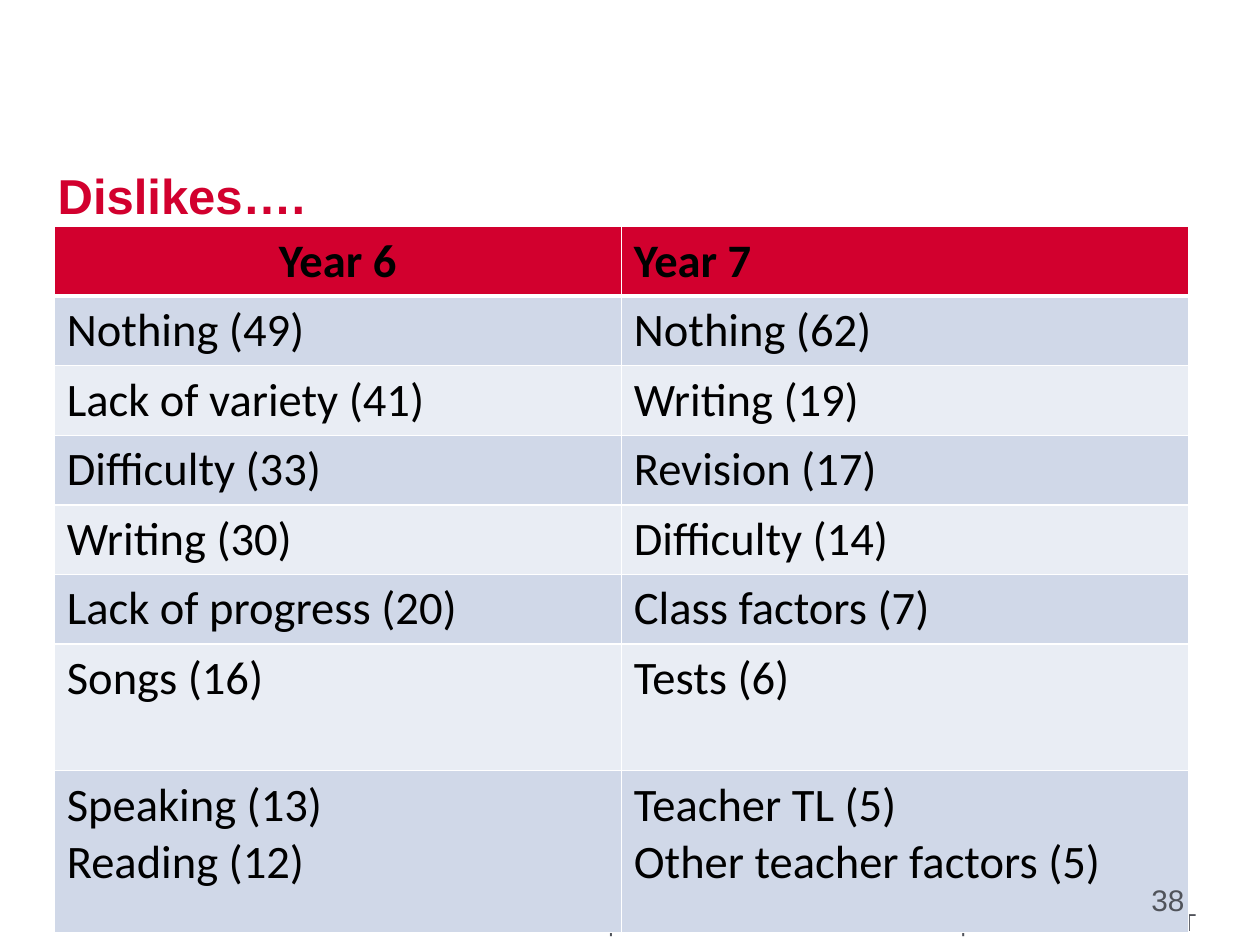
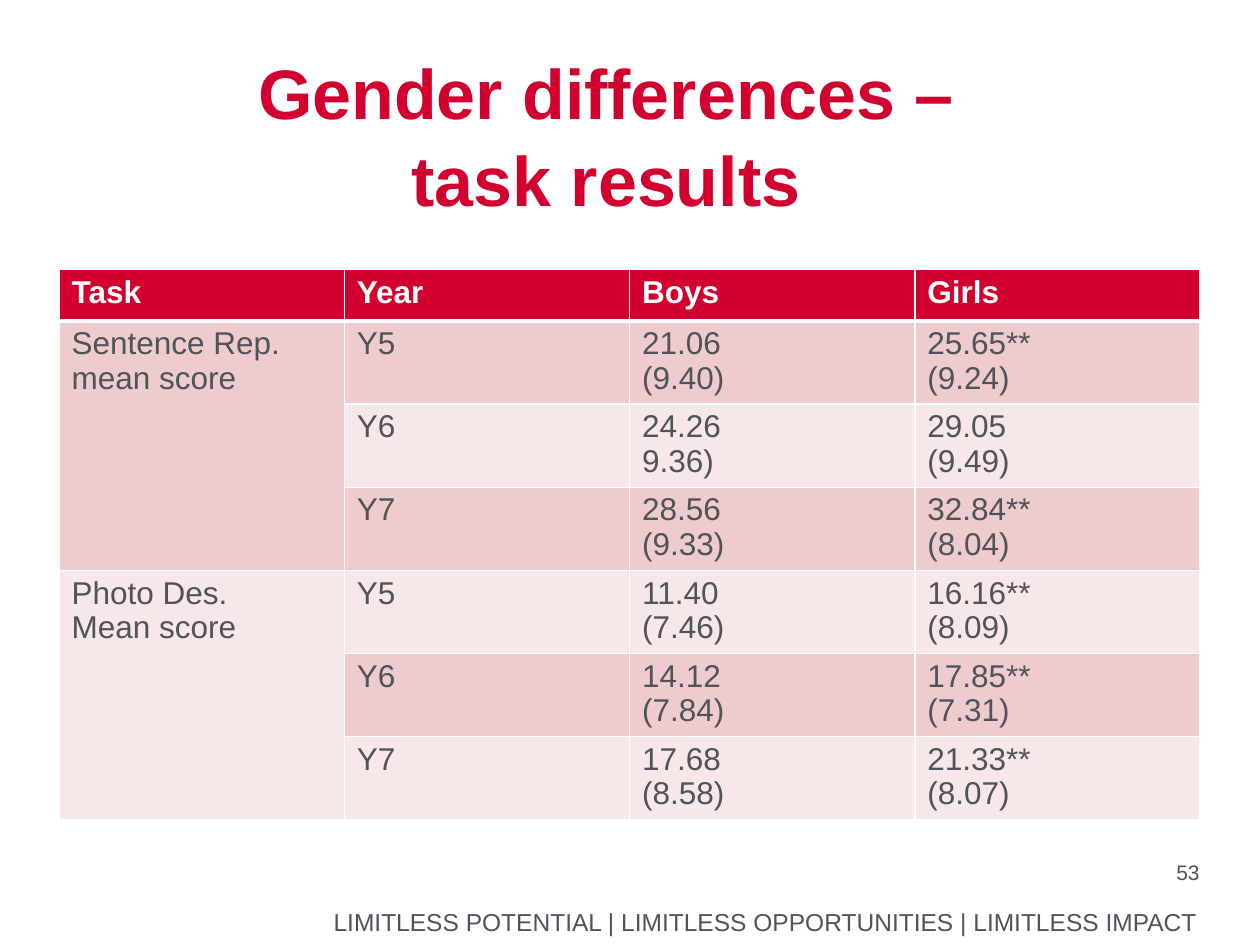
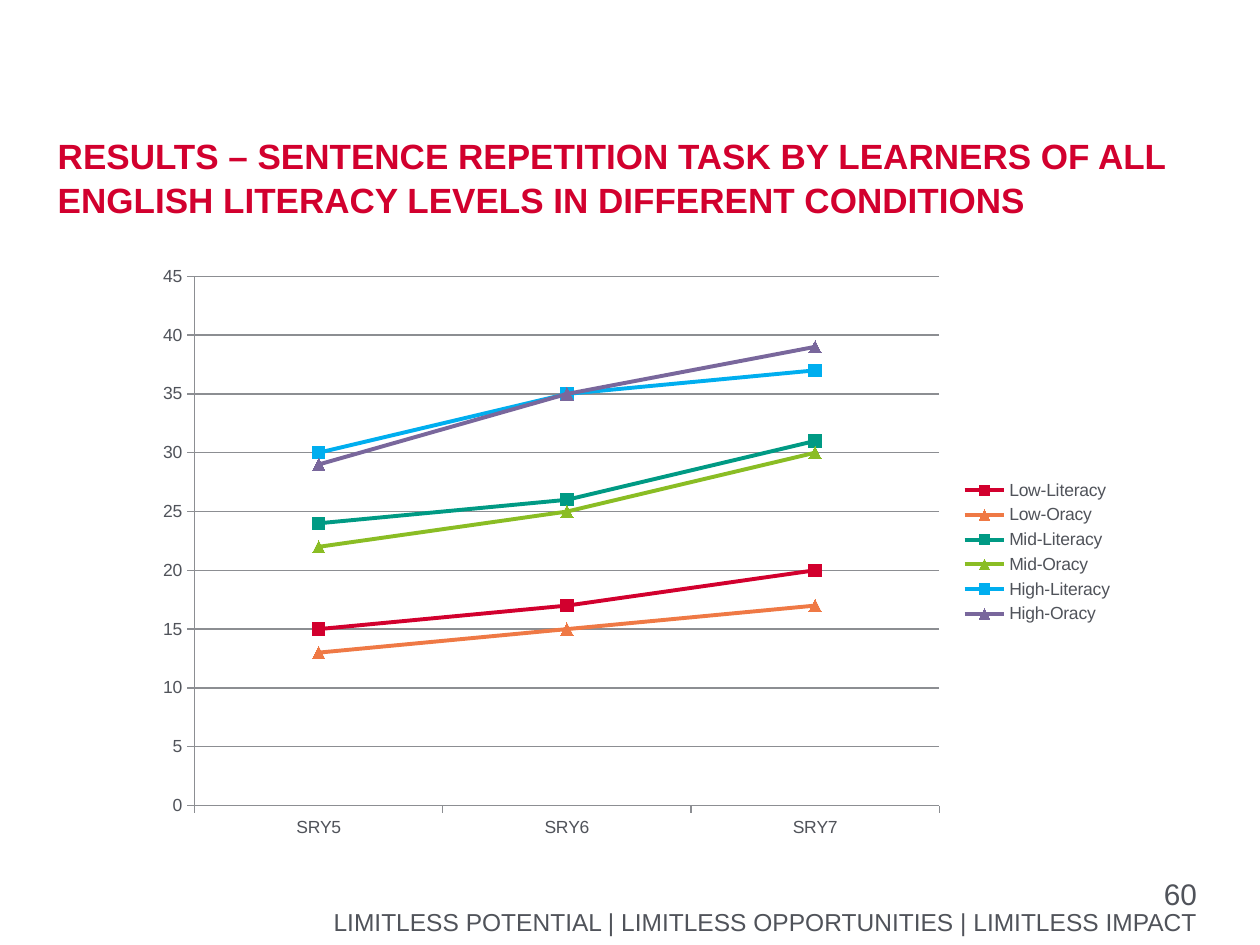
from collections import namedtuple

import lxml.etree
import pptx
import pptx.chart.data
import pptx.dml.color
import pptx.enum.chart
import pptx.enum.text
import pptx.oxml.ns
import pptx.util

Pt = pptx.util.Pt
ALIGN = pptx.enum.text.PP_ALIGN
ANCHOR = pptx.enum.text.MSO_ANCHOR
MARKER = pptx.enum.chart.XL_MARKER_STYLE

Box = namedtuple("Box", "left top width height")
TableStyle = namedtuple("TableStyle", "font size header dark light text spacing")

COLORS = {
    "red": "D2002E", "grey": "50535A", "white": "FFFFFF", "black": "000000",
    "blue_dark": "D0D8E8", "blue_light": "E9EDF4",
    "pink_dark": "EECCCD", "pink_light": "F7E7E8",
    "orange": "EF7945", "teal": "009A84", "green": "8ABD24",
    "sky": "00AEEF", "purple": "79679C", "axis": "8C8E92",
}
FONT = "Arial"
FOOTER = "LIMITLESS POTENTIAL | LIMITLESS OPPORTUNITIES | LIMITLESS IMPACT"
FOOTER_BOX = Box(152, 517.5, 532.5, 17.5)
TITLE_BOX = Box(33, 60.5, 652.5, 65.5)
NUMBER_BOX = Box(516, 500.5, 168, 29)

BLUE_STYLE = TableStyle("Calibri", 26.6, "black", "blue_dark", "blue_light", "black", 1.0)
PINK_STYLE = TableStyle(FONT, 18, "white", "pink_dark", "pink_light", "grey", 0.97)

DISLIKES = [
    ("Year 6", "Year 7"),
    ("Nothing (49)", "Nothing (62)"),
    ("Lack of variety (41)", "Writing (19)"),
    ("Difficulty (33)", "Revision (17)"),
    ("Writing (30)", "Difficulty (14)"),
    ("Lack of progress (20)", "Class factors (7)"),
    ("Songs (16)", "Tests (6)"),
    ("Speaking (13)\nReading (12)", "Teacher TL (5)\nOther teacher factors (5)"),
]
TASK_RESULTS = [
    ("Task", "Year", "Boys", "Girls"),
    ("Sentence Rep. mean score", "Y5", "21.06\n(9.40)", "25.65**\n(9.24)"),
    ("", "Y6", "24.26\n9.36)", "29.05\n(9.49)"),
    ("", "Y7", "28.56\n(9.33)", "32.84**\n(8.04)"),
    ("Photo Des.\nMean score", "Y5", "11.40\n(7.46)", "16.16**\n(8.09)"),
    ("", "Y6", "14.12\n(7.84)", "17.85**\n(7.31)"),
    ("", "Y7", "17.68\n(8.58)", "21.33**\n(8.07)"),
]
YEARS = ("SRY5", "SRY6", "SRY7")
SCORES = [
    ("Low-Literacy", "red", (15, 17, 20)),
    ("Low-Oracy", "orange", (13, 15, 17)),
    ("Mid-Literacy", "teal", (24, 26, 31)),
    ("Mid-Oracy", "green", (22, 25, 30)),
    ("High-Literacy", "sky", (30, 35, 37)),
    ("High-Oracy", "purple", (29, 35, 39)),
]


def rgb(name):
    """Return the named colour."""
    return pptx.dml.color.RGBColor.from_string(COLORS[name])


def points(box):
    """Return the box as four lengths."""
    return [Pt(value) for value in box]


def set_font(font, size, color, bold=False, name=FONT):
    """Set face, size, colour and weight of a font."""
    font.name, font.size, font.bold = name, Pt(size), bold
    font.color.rgb = rgb(color)


def set_frame(frame, anchor, margin=0):
    """Set wrapping, anchor and side margins of a text frame."""
    frame.word_wrap = True
    frame.auto_size = pptx.enum.text.MSO_AUTO_SIZE.NONE
    frame.vertical_anchor = anchor
    frame.margin_left = frame.margin_right = Pt(margin)
    frame.margin_top = frame.margin_bottom = Pt(margin / 2)


def add_right_text(slide, box, text, size, anchor, margin=0):
    """Add a right-aligned line of grey text."""
    frame = slide.shapes.add_textbox(*points(box)).text_frame
    set_frame(frame, anchor, margin)
    frame.text = text
    paragraph = frame.paragraphs[0]
    paragraph.alignment = ALIGN.RIGHT
    set_font(paragraph.font, size, "grey")


def add_number(slide, text, box=NUMBER_BOX, size=17, margin=0):
    """Add the slide number."""
    add_right_text(slide, box, text, size, ANCHOR.TOP, margin)


def add_slide(presentation, title, size, box=TITLE_BOX, alignment=ALIGN.LEFT):
    """Add a slide with the shared title style and footer."""
    slide = presentation.slides.add_slide(presentation.slide_layouts[5])
    shape = slide.shapes.title
    shape.left, shape.top, shape.width, shape.height = points(box)
    set_frame(shape.text_frame, ANCHOR.BOTTOM)
    shape.text_frame.text = title
    paragraph = shape.text_frame.paragraphs[0]
    paragraph.alignment = alignment
    paragraph.line_spacing = 1.04
    set_font(paragraph.font, size, "red", True)
    add_right_text(slide, FOOTER_BOX, FOOTER, 14, ANCHOR.BOTTOM)
    return slide


def set_borders(cell, row_index):
    """Draw white cell borders, thicker below the header row."""
    widths = {"lnL": 1, "lnR": 1, "lnT": 3 if row_index == 1 else 1,
              "lnB": 3 if row_index == 0 else 1}
    qn = pptx.oxml.ns.qn
    properties = cell._tc.get_or_add_tcPr()
    for tag, width in widths.items():
        line = lxml.etree.SubElement(properties, qn("a:" + tag), w=str(Pt(width)))
        fill = lxml.etree.SubElement(line, qn("a:solidFill"))
        lxml.etree.SubElement(fill, qn("a:srgbClr"), val=COLORS["white"])


def format_cell(cell, row_index, text, style):
    """Fill one table cell and style its text."""
    is_header = row_index == 0
    set_borders(cell, row_index)
    cell.fill.solid()
    band = style.dark if row_index % 2 else style.light
    cell.fill.fore_color.rgb = rgb("red" if is_header else band)
    cell.text_frame.text = text
    for paragraph in cell.text_frame.paragraphs:
        paragraph.line_spacing = style.spacing
        set_font(paragraph.font, style.size, style.header if is_header else style.text,
                 is_header, style.font)


def add_banded_table(slide, box, rows, heights, style):
    """Add a table with a red header and banded rows."""
    columns = len(rows[0])
    table = slide.shapes.add_table(len(rows), columns, *points(box)).table
    for column in table.columns:
        column.width = Pt(box.width / columns)
    for row_index, (texts, height) in enumerate(zip(rows, heights)):
        table.rows[row_index].height = Pt(height)
        for column_index, text in enumerate(texts):
            format_cell(table.cell(row_index, column_index), row_index, text, style)
    return table


def format_axis(axis):
    """Give an axis its line, ticks and labels."""
    axis.format.line.color.rgb = rgb("axis")
    axis.format.line.width = Pt(0.75)
    axis.major_tick_mark = pptx.enum.chart.XL_TICK_MARK.OUTSIDE
    axis.minor_tick_mark = pptx.enum.chart.XL_TICK_MARK.NONE
    set_font(axis.tick_labels.font, 10, "grey")


def add_score_chart(slide, box):
    """Add the line chart of scores by literacy level and condition."""
    data = pptx.chart.data.CategoryChartData()
    data.categories = YEARS
    for name, _, values in SCORES:
        data.add_series(name, values)
    kind = pptx.enum.chart.XL_CHART_TYPE.LINE_MARKERS
    chart = slide.shapes.add_chart(kind, *points(box), data).chart
    set_font(chart.font, 10, "grey")
    chart.has_title = False
    chart.has_legend = True
    chart.legend.position = pptx.enum.chart.XL_LEGEND_POSITION.RIGHT
    chart.legend.include_in_layout = False
    set_font(chart.legend.font, 10, "grey")
    format_axis(chart.category_axis)
    axis = chart.value_axis
    format_axis(axis)
    axis.minimum_scale, axis.maximum_scale, axis.major_unit = 0, 45, 5
    axis.has_major_gridlines = True
    axis.major_gridlines.format.line.color.rgb = rgb("axis")
    axis.major_gridlines.format.line.width = Pt(0.75)
    plot = chart.plots[0]
    plot.vary_by_categories = False
    for index, (series, score) in enumerate(zip(plot.series, SCORES)):
        color = rgb(score[1])
        series.smooth = False
        series.format.line.color.rgb = color
        series.format.line.width = Pt(2.25)
        series.marker.style = MARKER.TRIANGLE if index % 2 else MARKER.SQUARE
        series.marker.size = 7
        series.marker.format.fill.solid()
        series.marker.format.fill.fore_color.rgb = color
        series.marker.format.line.color.rgb = color


def build_dislikes(presentation):
    """Build the slide that lists dislikes by year."""
    slide = add_slide(presentation, "Dislikes….", 28, TITLE_BOX._replace(height=67.5))
    heights = [39.7] * 6 + [72.5, 92.5]
    box = Box(31, 129.5, 648, sum(heights))
    table = add_banded_table(slide, box, DISLIKES, heights, BLUE_STYLE)
    table.cell(0, 0).text_frame.paragraphs[0].alignment = ALIGN.CENTER
    add_number(slide, "38", margin=7.2)


def build_gender(presentation):
    """Build the slide of task results by gender."""
    slide = add_slide(presentation, "Gender differences –\vtask results", 40,
                      TITLE_BOX._replace(left=20), ALIGN.CENTER)
    heights = [29.5] + [47.5] * 6
    box = Box(33.75, 154, 652, sum(heights))
    table = add_banded_table(slide, box, TASK_RESULTS, heights, PINK_STYLE)
    for first in (1, 4):
        table.cell(first, 0).merge(table.cell(first + 2, 0))
    add_number(slide, "53", Box(632, 491, 53.5, 20), 12)


def build_scores(presentation):
    """Build the slide with the sentence repetition chart."""
    title = ("RESULTS – SENTENCE REPETITION TASK BY LEARNERS OF ALL\v"
             "ENGLISH LITERACY LEVELS IN DIFFERENT CONDITIONS")
    slide = add_slide(presentation, title, 20)
    add_number(slide, "60")
    add_score_chart(slide, Box(82, 145.5, 561.5, 340))


def main():
    """Build and save the presentation."""
    presentation = pptx.Presentation()
    presentation.slide_width, presentation.slide_height = Pt(720), Pt(540)
    build_dislikes(presentation)
    build_gender(presentation)
    build_scores(presentation)
    presentation.save("out.pptx")


if __name__ == "__main__":
    main()
